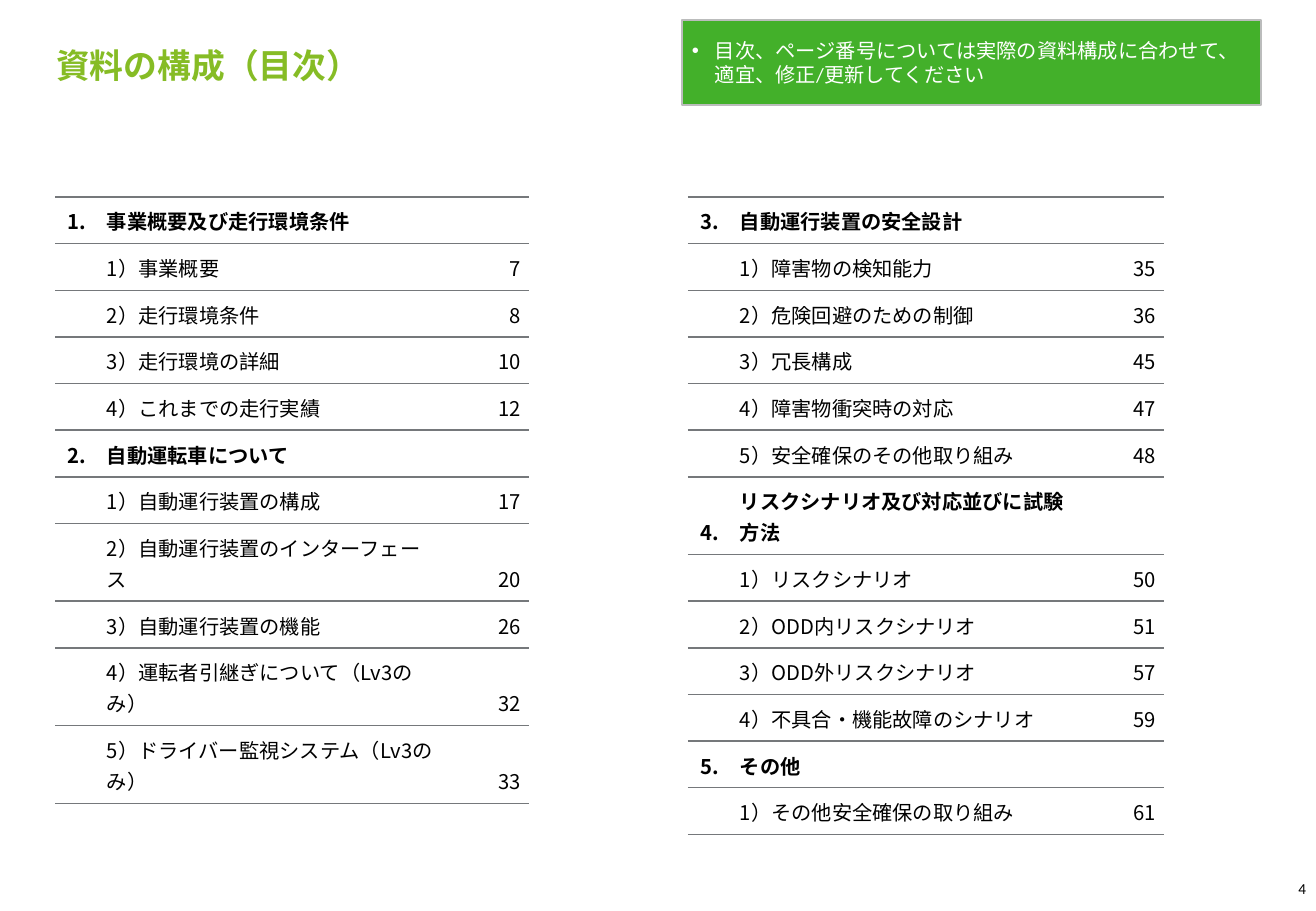
"""Build the table-of-contents slide with two ruled page lists."""
from pptx import Presentation
from pptx.dml.color import RGBColor
from pptx.enum.shapes import MSO_SHAPE
from pptx.enum.text import MSO_ANCHOR, MSO_AUTO_SIZE, PP_ALIGN
from pptx.oxml.ns import qn
from pptx.util import Emu, Pt
from lxml import etree

TITLE = "資料の構成（目次）"
NOTE = ["目次、ページ番号については実際の資料構成に合わせて、", "適宜、修正/更新してください"]
PAGE = "4"
LEFT_SECTIONS = [
    ("1.", "事業概要及び走行環境条件", [
        ("1）事業概要", 7),
        ("2）走行環境条件", 8),
        ("3）走行環境の詳細", 10),
        ("4）これまでの走行実績", 12)]),
    ("2.", "自動運転車について", [
        ("1）自動運行装置の構成", 17),
        ("2）自動運行装置のインターフェース", 20),
        ("3）自動運行装置の機能", 26),
        ("4）運転者引継ぎについて（Lv3のみ）", 32),
        ("5）ドライバー監視システム（Lv3のみ）", 33)]),
]
RIGHT_SECTIONS = [
    ("3.", "自動運行装置の安全設計", [
        ("1）障害物の検知能力", 35),
        ("2）危険回避のための制御", 36),
        ("3）冗長構成", 45),
        ("4）障害物衝突時の対応", 47),
        ("5）安全確保のその他取り組み", 48)]),
    ("4.", "リスクシナリオ及び対応並びに試験方法", [
        ("1）リスクシナリオ", 50),
        ("2）ODD内リスクシナリオ", 51),
        ("3）ODD外リスクシナリオ", 57),
        ("4）不具合・機能故障のシナリオ", 59)]),
    ("5.", "その他", [
        ("1）その他安全確保の取り組み", 61)]),
]
TABLES = [
    (55, (44, 344, 86), LEFT_SECTIONS),
    (688, (44, 346, 86), RIGHT_SECTIONS),
]
TABLE_TOP, ROW_H, SIDE_PAD = 197, 42, 8
CELL_PAD = Pt(4.6)

LIME = RGBColor(0x86, 0xBC, 0x25)
GREEN = RGBColor(0x43, 0xB0, 0x2A)
SILVER = RGBColor(0xBB, 0xBC, 0xBC)
RULE = RGBColor(0x75, 0x78, 0x7B)
BLACK = RGBColor(0, 0, 0)
WHITE = RGBColor(0xFF, 0xFF, 0xFF)
LATIN, JAPANESE = "Calibri", "Noto Sans CJK JP"
LEFT, CENTER, RIGHT = PP_ALIGN.LEFT, PP_ALIGN.CENTER, PP_ALIGN.RIGHT
MIDDLE, BOTTOM = MSO_ANCHOR.MIDDLE, MSO_ANCHOR.BOTTOM


def px(n):
    return Emu(n * 7526)


def write(p, *lines, size=12, font=LATIN, color=BLACK, bold=False, align=LEFT):
    p.alignment = align
    for i, line in enumerate(lines):
        if i:
            p.add_line_break()
        r = p.add_run()
        r.text = line
        r.font.size, r.font.name, r.font.bold = Pt(size), font, bold
        r.font.color.rgb = color
        etree.SubElement(r._r.get_or_add_rPr(), qn("a:ea"), typeface=font)
    end = etree.SubElement(p._p, qn("a:endParaRPr"), sz=str(size * 100))
    etree.SubElement(end, qn("a:latin"), typeface=font)


def setup(tf, anchor, pad=0, wrap=True):
    tf.auto_size, tf.word_wrap, tf.vertical_anchor = MSO_AUTO_SIZE.NONE, wrap, anchor
    tf.margin_left = tf.margin_right = tf.margin_top = tf.margin_bottom = px(pad)
    return tf.paragraphs[0]


def rule_cell(cell):
    tcPr = cell._tc.get_or_add_tcPr()
    for side in ("L", "R"):
        ln = etree.SubElement(tcPr, qn("a:ln" + side), w="0")
        etree.SubElement(ln, qn("a:noFill"))
    for side in ("T", "B"):
        ln = etree.SubElement(tcPr, qn("a:ln" + side), w=str(Pt(1)))
        fill = etree.SubElement(ln, qn("a:solidFill"))
        etree.SubElement(fill, qn("a:srgbClr"), val=str(RULE))
    cell.fill.background()


def contents_table(slide, left, widths, sections):
    rows = []
    for number, heading, items in sections:
        rows.append((number, heading, "", True))
        rows += [("", item, str(page), False) for item, page in items]
    table = slide.shapes.add_table(len(rows), len(widths), px(left), px(TABLE_TOP),
                                   px(sum(widths)), px(ROW_H * len(rows))).table
    table.first_row = table.horz_banding = False
    for col, width in zip(table.columns, widths):
        col.width = px(width)
    for row, (*texts, bold) in zip(table.rows, rows):
        row.height = px(ROW_H)
        for cell, text, align in zip(row.cells, texts, (CENTER, LEFT, RIGHT)):
            rule_cell(cell)
            cell.vertical_anchor = BOTTOM
            cell.margin_left = cell.margin_right = px(SIDE_PAD)
            cell.margin_top = cell.margin_bottom = CELL_PAD
            p = cell.text_frame.paragraphs[0]
            p.line_spacing = 1.06
            write(p, *filter(None, [text]), font=JAPANESE, bold=bold, align=align)


def main():
    prs = Presentation()
    prs.slide_width, prs.slide_height = px(1316), px(911)
    slide = prs.slides.add_slide(prs.slide_layouts[5])

    title = slide.shapes.title
    title.left, title.top, title.width, title.height = map(px, (56, 34, 1205, 62))
    write(setup(title.text_frame, MIDDLE), TITLE, size=20, color=LIME, bold=True)

    for left, widths, sections in TABLES:
        contents_table(slide, left, widths, sections)

    number = slide.shapes.add_textbox(*map(px, (1282, 875, 24, 23)))
    write(setup(number.text_frame, BOTTOM), PAGE, size=9, align=RIGHT)

    note = slide.shapes.add_shape(MSO_SHAPE.RECTANGLE, *map(px, (682, 20, 579, 85)))
    note.shadow.inherit = False
    note.fill.solid()
    note.fill.fore_color.rgb = GREEN
    note.line.color.rgb, note.line.width = SILVER, Pt(1)
    p = setup(note.text_frame, MIDDLE, pad=10)
    pPr = p._p.get_or_add_pPr()
    pPr.set("marL", str(px(23)))
    pPr.set("indent", str(-px(23)))
    etree.SubElement(pPr, qn("a:buFont"), typeface="Arial")
    etree.SubElement(pPr, qn("a:buChar"), char="•")
    write(p, *NOTE, color=WHITE)

    prs.save("out.pptx")


if __name__ == "__main__":
    main()
